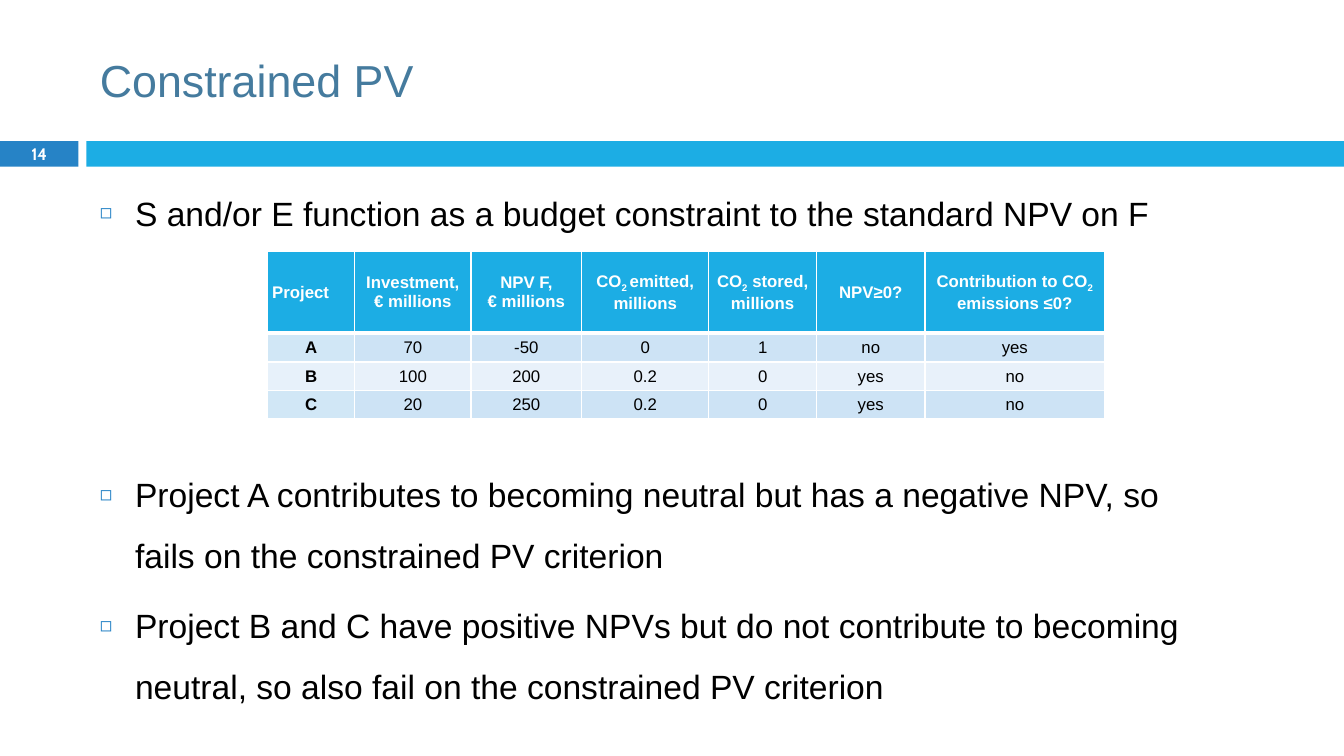
from dataclasses import dataclass

from lxml import etree
from pptx import Presentation
from pptx.dml.color import RGBColor
from pptx.enum import shapes, text
from pptx.oxml import ns
from pptx.util import Cm, Pt


@dataclass(frozen=True)
class Theme:
    font: str = "Arial"
    number_font: str = "Cabin"
    title_color: str = "457B9E"
    ink: str = "000000"
    white: str = "FFFFFF"
    accent: str = "1CADE4"
    accent_dark: str = "2683C6"
    bands: tuple = ("CDE3F5", "E8F1FA")
    label_bands: tuple = ("D1E7F6", "E7F1FA")
    title_size: float = 32
    body_size: float = 24
    table_size: float = 12
    number_size: float = 11.9


THEME = Theme()

BULLETS = [
    ("S and/or E function as a budget constraint to the standard NPV on F", 7),
    ("Project A contributes to becoming neutral but has a negative NPV, "
     "so fails on the constrained PV criterion", 158),
    ("Project B and C have positive NPVs but do not contribute to becoming "
     "neutral, so also fail on the constrained PV criterion", 7),
]
HEADINGS = ["Project", "Investment,\v€ millions", "NPV F,\v€ millions",
            "CO_2 _emitted, millions", "CO_2_ stored, millions", "NPV≥0?",
            "Contribution to CO_2_ emissions ≤0?"]
PROJECTS = [
    ["A", "70", "-50", "0", "1", "no", "yes"],
    ["B", "100", "200", "0.2", "0", "yes", "no"],
    ["C", "20", "250", "0.2", "0", "yes", "no"],
]
COLUMN_WIDTHS = [2.2, 2.93, 2.79, 3.2, 2.72, 2.73, 4.53]
HEADER_HEIGHT, ROW_HEIGHT = 2.06, 0.72


def rgb(value):
    return RGBColor.from_string(value)


def style(font, name, size, color, bold=False):
    font.name, font.size, font.bold = name, Pt(size), bold
    font.color.rgb = rgb(color)


def place(holder, left, top, width, height):
    holder.left, holder.top = Cm(left), Cm(top)
    holder.width, holder.height = Cm(width), Cm(height)


def add_child(parent, tag, **attributes):
    return etree.SubElement(parent, ns.qn(tag), attributes)


def set_bullet(paragraph):
    properties = paragraph._p.get_or_add_pPr()
    properties.set("marL", str(Cm(0.89)))
    properties.set("indent", str(-Cm(0.89)))
    add_child(add_child(properties, "a:buClr"), "a:srgbClr", val=THEME.accent_dark)
    add_child(properties, "a:buSzPct", val="60000")
    add_child(properties, "a:buChar", char="◻")


def set_borders(cell, bottom_width):
    properties = cell._tc.get_or_add_tcPr()
    for side, width in (("L", 1), ("R", 1), ("T", 1), ("B", bottom_width)):
        line = add_child(properties, f"a:ln{side}", w=str(Pt(width)))
        add_child(add_child(line, "a:solidFill"), "a:srgbClr", val=THEME.white)


def add_bar(slide, left, width, color):
    bar = slide.shapes.add_shape(
        shapes.MSO_SHAPE.RECTANGLE, Cm(left), Cm(3.56), Cm(width), Cm(0.64))
    bar.shadow.inherit = False
    bar.fill.solid()
    bar.fill.fore_color.rgb = rgb(color)
    bar.line.fill.background()
    return bar


def add_slide_number(bar, number):
    frame = bar.text_frame
    frame.margin_top = frame.margin_bottom = 0
    frame.vertical_anchor = text.MSO_ANCHOR.MIDDLE
    paragraph = frame.paragraphs[0]
    paragraph.text = number
    paragraph.alignment = text.PP_ALIGN.CENTER
    style(paragraph.font, THEME.number_font, THEME.number_size, THEME.white, True)


def fill_title(title, wording):
    place(title, 2.26, 0.64, 30.2, 2.74)
    frame = title.text_frame
    frame.auto_size = text.MSO_AUTO_SIZE.NONE
    frame.vertical_anchor = text.MSO_ANCHOR.MIDDLE
    paragraph = frame.paragraphs[0]
    paragraph.text = wording
    paragraph.alignment = text.PP_ALIGN.LEFT
    style(paragraph.font, THEME.font, THEME.title_size, THEME.title_color)


def fill_body(body, bullets):
    place(body, 2.26, 4.22, 28.85, 13.69)
    frame = body.text_frame
    frame.auto_size = text.MSO_AUTO_SIZE.NONE
    frame.text = "\n".join(wording for wording, _ in bullets)
    for paragraph, (_, space_before) in zip(frame.paragraphs, bullets):
        paragraph.line_spacing = 1.5
        paragraph.space_before = Pt(space_before)
        set_bullet(paragraph)
        style(paragraph.font, THEME.font, THEME.body_size, THEME.ink)


def fill_cell(cell, wording, fill, color, bold, alignment, bottom_width):
    set_borders(cell, bottom_width)
    cell.fill.solid()
    cell.fill.fore_color.rgb = rgb(fill)
    cell.margin_left = cell.margin_right = Cm(0.12)
    cell.margin_top = cell.margin_bottom = 0
    cell.vertical_anchor = text.MSO_ANCHOR.MIDDLE
    paragraph = cell.text_frame.paragraphs[0]
    paragraph.alignment = alignment
    paragraph.space_before = paragraph.space_after = Pt(2)
    style(paragraph.font, THEME.font, THEME.table_size, color, bold)
    if "_" not in wording:
        paragraph.text = wording
        return
    for index, part in enumerate(wording.split("_")):
        run = paragraph.add_run()
        run.text = part
        if index % 2:
            run._r.get_or_add_rPr().set("baseline", "-25000")


def add_project_table(slide):
    height = HEADER_HEIGHT + ROW_HEIGHT * len(PROJECTS)
    projects = slide.shapes.add_table(
        len(PROJECTS) + 1, len(HEADINGS), Cm(6.74), Cm(6.34),
        Cm(sum(COLUMN_WIDTHS)), Cm(height)).table
    for column, width in zip(projects.columns, COLUMN_WIDTHS):
        column.width = Cm(width)
    for index, row in enumerate(projects.rows):
        row.height = Cm(ROW_HEIGHT if index else HEADER_HEIGHT)
    for c, heading in enumerate(HEADINGS):
        alignment = text.PP_ALIGN.CENTER if c else text.PP_ALIGN.LEFT
        fill_cell(projects.cell(0, c), heading, THEME.accent, THEME.white,
                  True, alignment, 3)
    for r, values in enumerate(PROJECTS):
        for c, value in enumerate(values):
            bands = THEME.bands if c else THEME.label_bands
            fill_cell(projects.cell(r + 1, c), value, bands[r % 2], THEME.ink,
                      c == 0, text.PP_ALIGN.CENTER, 1)


def main():
    deck = Presentation()
    deck.slide_width, deck.slide_height = Cm(33.87), Cm(19.05)
    slide = deck.slides.add_slide(deck.slide_layouts[1])
    number_bar = add_bar(slide, 0, 1.98, THEME.accent_dark)
    add_slide_number(number_bar, "14")
    add_bar(slide, 2.18, 31.69, THEME.accent)
    fill_title(slide.shapes.title, "Constrained PV")
    fill_body(slide.placeholders[1], BULLETS)
    add_project_table(slide)
    deck.save("out.pptx")


if __name__ == "__main__":
    main()
